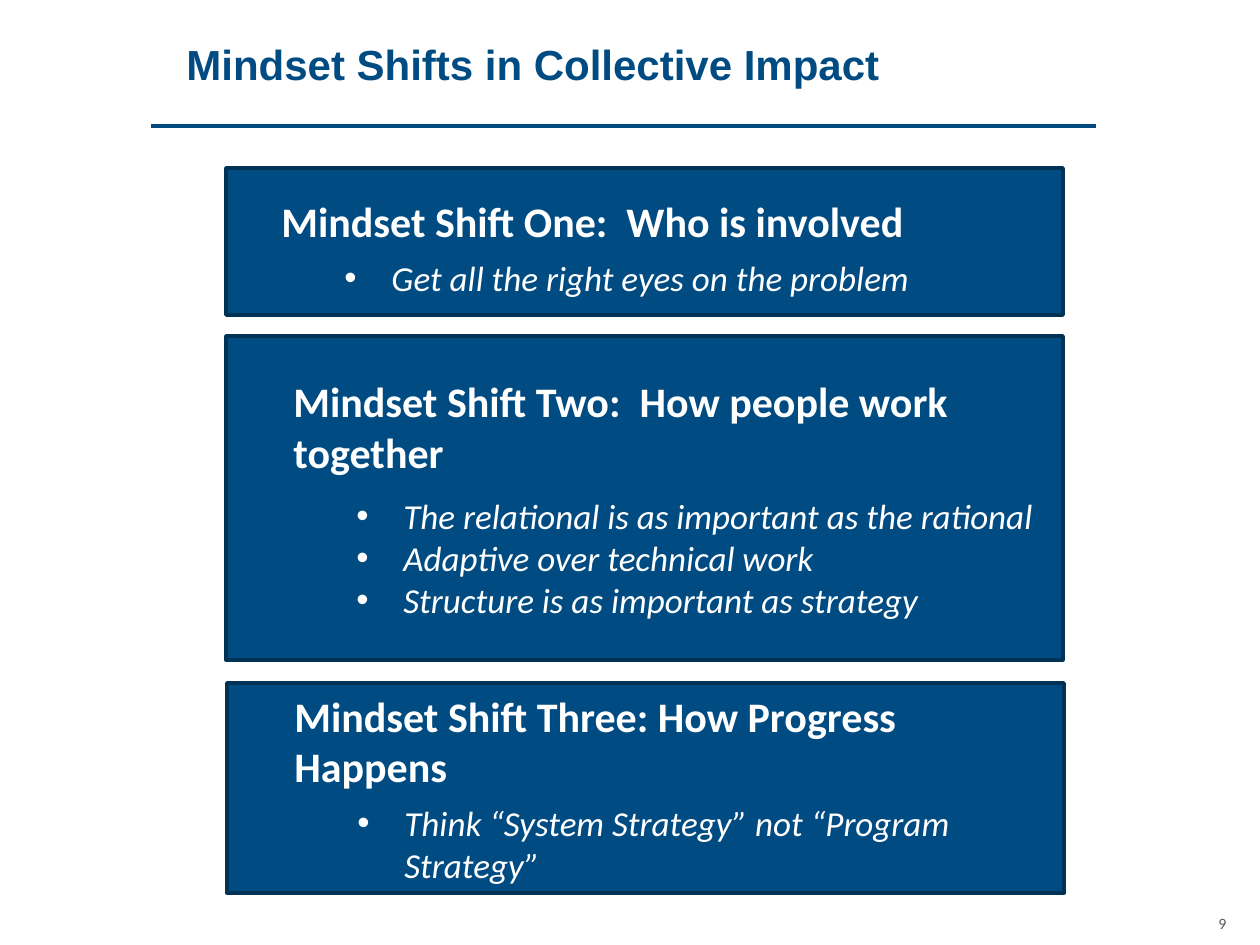
from lxml import etree
from pptx import Presentation, util as u
from pptx.dml.color import RGBColor
from pptx.enum import shapes, text
from pptx.oxml import ns

PX = 914400 / 126
COLORS = {"blue": "004B82", "edge": "003256", "white": "FFFFFF", "grey": "595959"}
HEADING = {"name": "Calibri", "size": u.Pt(24), "bold": True}
POINT = {"name": "Calibri", "size": u.Pt(20), "italic": True}
TITLE = {"name": "Arial", "size": u.Pt(24), "bold": True}
NUMBER = {"name": "Calibri", "size": u.Pt(9)}
LEFT, CENTER = text.PP_ALIGN.LEFT, text.PP_ALIGN.CENTER
TOP, MIDDLE = text.MSO_ANCHOR.TOP, text.MSO_ANCHOR.MIDDLE


def px(*lengths):
    return [u.Emu(round(length * PX)) for length in lengths]


def write(box, lines, color, anchor=MIDDLE, align=LEFT):
    """Each line is (words, font values, left indent in px, space before in pt, bulleted)."""
    frame = box.text_frame
    frame.word_wrap = True
    frame.vertical_anchor = anchor
    for index, (words, font, indent, gap, bulleted) in enumerate(lines):
        para = frame.paragraphs[0] if index == 0 else frame.add_paragraph()
        para.alignment = align
        para.space_before = u.Pt(gap)
        properties = para._p.get_or_add_pPr()
        hang = -47 if bulleted else 0
        properties.set("marL", str(px(indent)[0]))
        properties.set("indent", str(px(hang)[0]))
        if bulleted:
            etree.SubElement(properties, ns.qn("a:buFont"), typeface="Arial")
            etree.SubElement(properties, ns.qn("a:buChar"), char="•")
        span = para.add_run()
        span.text = words
        span.font.color.rgb = RGBColor.from_string(COLORS[color])
        for name, value in font.items():
            setattr(span.font, name, value)


deck = Presentation()
deck.slide_width, deck.slide_height = px(1260, 945)
page = deck.slides.add_slide(deck.slide_layouts[6])

number = page.shapes.add_textbox(*px(1193, 907, 59, 32))
write(number, [("9", NUMBER, 0, 0, False)], "grey", align=CENTER)

title = page.shapes.add_textbox(*px(174, 18, 914, 91))
write(title, [("Mindset Shifts in Collective Impact", TITLE, 0, 0, False)], "blue")

rule = page.shapes.add_connector(shapes.MSO_CONNECTOR.STRAIGHT, *px(151, 126, 1096, 126))
rule.line.color.rgb = RGBColor.from_string(COLORS["blue"])
rule.line.width = u.Pt(2.25)
etree.SubElement(rule._element.spPr, ns.qn("a:effectLst"))

# left, top, height, heading, gap in pt below the heading, points
PANELS = [
    (226, 168, 147, "Mindset Shift One:  Who is involved", 6,
     ["Get all the right eyes on the problem"]),
    (226, 336, 324, "Mindset Shift Two:  How people work together", 10,
     ["The relational is as important as the rational",
      "Adaptive over technical work",
      "Structure is as important as strategy"]),
    (227, 683, 210, "Mindset Shift Three: How Progress Happens", 6,
     ["Think “System Strategy” not “Program Strategy”"]),
]
for order, (left, top, height, heading, gap, points) in enumerate(PANELS):
    panel = page.shapes.add_shape(shapes.MSO_SHAPE.RECTANGLE, *px(left, top, 837, height))
    panel.shadow.inherit = False
    panel.fill.solid()
    panel.fill.fore_color.rgb = RGBColor.from_string(COLORS["blue"])
    panel.line.color.rgb = RGBColor.from_string(COLORS["edge"])
    panel.line.width = u.Pt(2)

    holder, indent, anchor = panel, 55, MIDDLE
    if order == 0:  # the first text sits in its own unfilled shape over the panel
        holder = page.shapes.add_shape(
            shapes.MSO_SHAPE.FLOWCHART_PREDEFINED_PROCESS, *px(151, 189, 945, 320))
        holder.shadow.inherit = False
        holder.fill.background()
        holder.line.fill.background()
        indent, anchor = 0, TOP
    lines = [(heading, HEADING, indent, 0, False)]
    for index, point in enumerate(points):
        lines.append((point, POINT, indent + 110, 0 if index else gap, True))
    write(holder, lines, "white", anchor)

deck.save("out.pptx")
